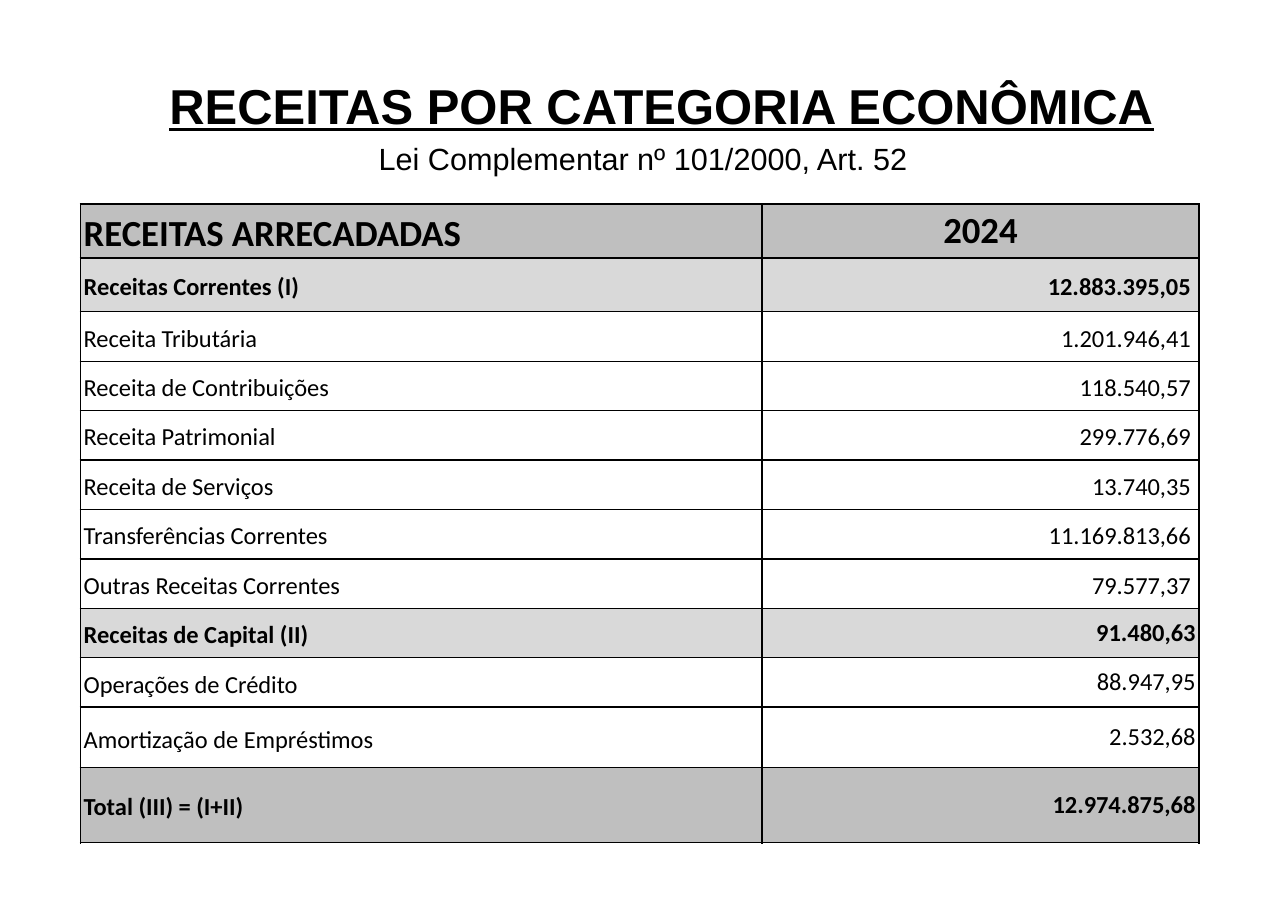
from lxml import etree
from pptx import Presentation
from pptx import util as u
from pptx.dml.color import RGBColor
from pptx.enum import text
from pptx.oxml.ns import qn

# Content
TITLE = "RECEITAS POR CATEGORIA ECONÔMICA"
LAW = "Lei Complementar nº 101/2000, Art. 52"
# label, value, level, row height in cm
ROWS = [
    ("RECEITAS ARRECADADAS", "2024", "header", 1.14),
    ("Receitas Correntes (I)", "12.883.395,05", "group", 1.24),
    ("Receita Tributária", "1.201.946,41", "item", 1.14),
    ("Receita de Contribuições", "118.540,57", "item", 1.14),
    ("Receita Patrimonial", "299.776,69", "item", 1.14),
    ("Receita de Serviços", "13.740,35", "item", 1.14),
    ("Transferências Correntes", "11.169.813,66", "item", 1.14),
    ("Outras Receitas Correntes", "79.577,37", "item", 1.14),
    ("Receitas de Capital (II)", "91.480,63", "group", 1.14),
    ("Operações de Crédito", "88.947,95", "item", 1.14),
    ("Amortização de Empréstimos", "2.532,68", "item", 1.4),
    ("Total (III) = (I+II)", "12.974.875,68", "total", 1.73),
]
FILLS = {"header": "BFBFBF", "group": "D9D9D9", "item": "FFFFFF", "total": "BFBFBF"}
COLUMNS = (15.72, 10.08)
CURRENT_REVENUE = range(1, 8)  # rows whose values have the wider margin
BLACK = "000000"
LEFT, CENTER, RIGHT = text.PP_ALIGN.LEFT, text.PP_ALIGN.CENTER, text.PP_ALIGN.RIGHT


def color(value):
    return RGBColor.from_string(value)


def write(tf, words, font, size, align, bold=False, underline=False, spacing=1.0):
    p = tf.paragraphs[0]
    p.alignment, p.line_spacing = align, spacing
    r = p.add_run()
    r.text = words
    r.font.name, r.font.size = font, u.Pt(size)
    r.font.bold, r.font.underline = bold, underline
    r.font.color.rgb = color(BLACK)
    return p


def write_heading(sp, words, size, align, **style):
    tf = sp.text_frame
    tf.word_wrap = True
    tf.auto_size = text.MSO_AUTO_SIZE.NONE
    tf.vertical_anchor = text.MSO_ANCHOR.TOP
    tf.margin_left = tf.margin_right = tf.margin_bottom = 0
    tf.margin_top = u.Cm(0.03)
    write(tf, words, "Arial", size, align, **style).space_before = u.Pt(1)


def add_borders(cell):
    props = cell._tc.get_or_add_tcPr()
    for i, side in enumerate(("a:lnL", "a:lnR", "a:lnT", "a:lnB")):
        line = etree.Element(qn(side), w=str(u.Pt(1)))
        fill = etree.SubElement(line, qn("a:solidFill"))
        etree.SubElement(fill, qn("a:srgbClr"), val=BLACK)
        props.insert(i, line)


def fill_cell(cell, words, level, align, margin, spacing):
    cell.fill.solid()
    cell.fill.fore_color.rgb = color(FILLS[level])
    cell.vertical_anchor = text.MSO_ANCHOR.MIDDLE
    cell.margin_left = cell.margin_right = u.Cm(margin)
    cell.margin_top = cell.margin_bottom = u.Cm(0.03)
    size = 24 if level == "header" else 16
    write(cell.text_frame, words, "Calibri", size, align,
          bold=level != "item", spacing=spacing)
    add_borders(cell)


def main():
    prs = Presentation()
    prs.slide_width, prs.slide_height = u.Cm(29.7), u.Cm(21)
    s = prs.slides.add_slide(prs.slide_layouts[5])

    # Title and legal basis
    title = s.shapes.title
    title.left, title.top = u.Cm(3.45), u.Cm(1.7)
    title.width, title.height = u.Cm(23.62), u.Cm(1.4)
    write_heading(title, TITLE, 32, CENTER, bold=True, underline=True)
    law = s.shapes.add_textbox(u.Cm(8.73), u.Cm(3.2), u.Cm(12.3), u.Cm(0.91))
    write_heading(law, LAW, 20, LEFT)

    # Revenue table
    height = sum(row[3] for row in ROWS)
    table = s.shapes.add_table(len(ROWS), 2, u.Cm(1.85), u.Cm(4.7),
                               u.Cm(sum(COLUMNS)), u.Cm(height)).table
    table.horz_banding = False
    for column, width in zip(table.columns, COLUMNS):
        column.width = u.Cm(width)
    for i, (label, value, level, row_height) in enumerate(ROWS):
        table.rows[i].height = u.Cm(row_height)
        align = CENTER if level == "header" else RIGHT
        margin, spacing = (0.19, 1.15) if i in CURRENT_REVENUE else (0.08, 1.0)
        fill_cell(table.cell(i, 0), label, level, LEFT, 0.08, 1.15)
        fill_cell(table.cell(i, 1), value, level, align, margin, spacing)

    prs.save("out.pptx")


if __name__ == "__main__":
    main()
